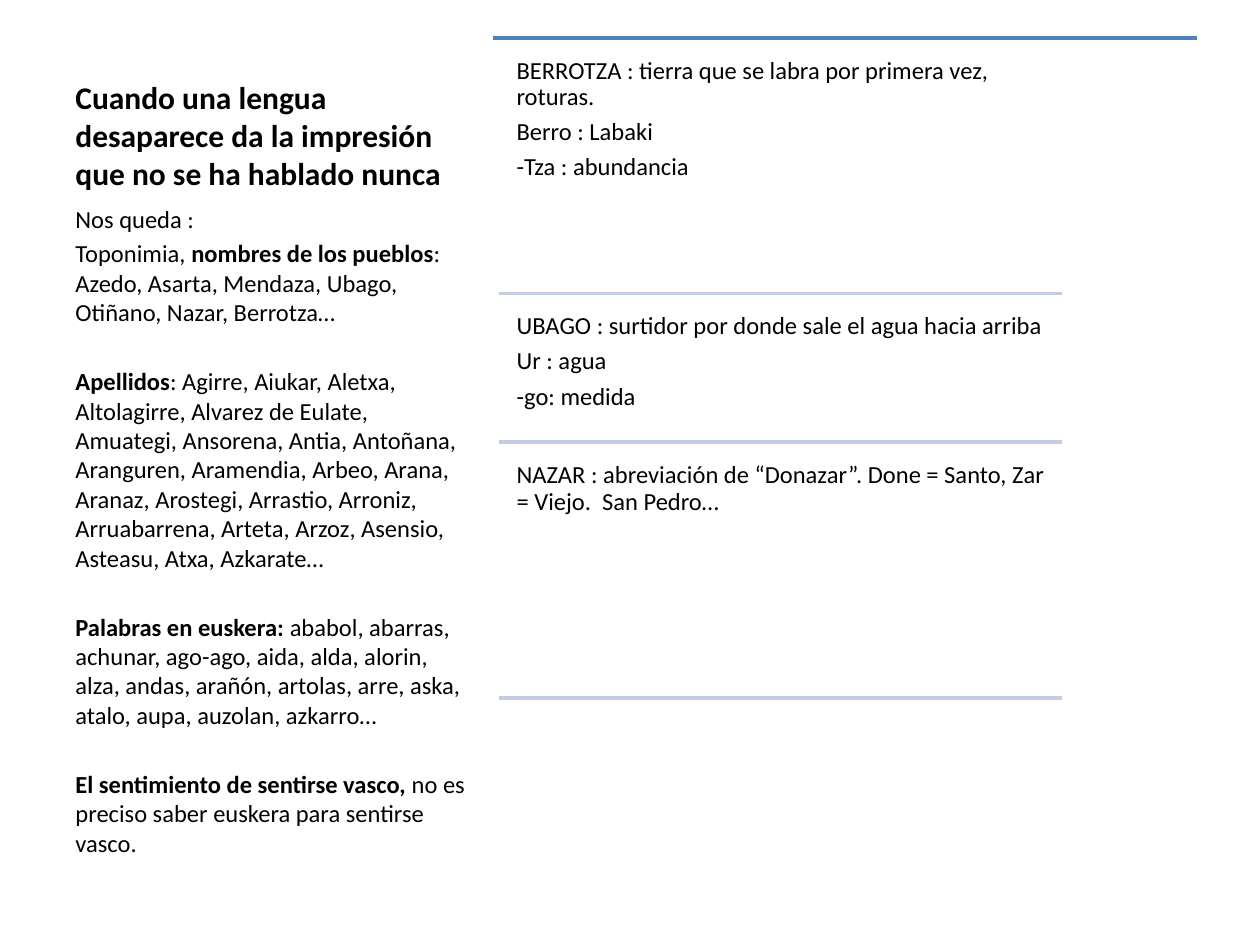
from lxml import etree
from pptx import Presentation
from pptx import util as u
from pptx.dml.color import RGBColor
from pptx.enum import shapes, text
from pptx.oxml.ns import qn

COLORS = {"text": "000000", "top rule": "4F81BD", "rule": "C2CDE1"}
FONT = "Calibri"
BODY_SIZE = 14

presentation = Presentation()
presentation.slide_width = u.Inches(10)
presentation.slide_height = u.Inches(7.5)
slide = presentation.slides.add_slide(presentation.slide_layouts[6])

LEFT, LEFT_WIDTH = 0.5, 3.29
TOP, BODY_TOP, BODY_HEIGHT = 0.3, 1.57, 5.13
ENTRY_LEFT, ENTRY_WIDTH, ENTRY_GAP = 4.04, 4.39, 0.1
RULE_LEFT, RULE_RIGHT = 3.96, 8.43


def add_text(box, paragraphs, size=BODY_SIZE, inset=(0.1, 0.05), anchor=text.MSO_ANCHOR.TOP):
    """Add a text box; each paragraph is a list of (words, bold) runs."""
    frame = slide.shapes.add_textbox(*map(u.Inches, box)).text_frame
    frame.word_wrap = True
    frame.vertical_anchor = anchor
    frame.margin_left = frame.margin_right = u.Inches(inset[0])
    frame.margin_top = frame.margin_bottom = u.Inches(inset[1])
    for index, runs in enumerate(paragraphs):
        paragraph = frame.add_paragraph() if index else frame.paragraphs[0]
        paragraph.font.name = FONT
        paragraph.font.size = u.Pt(size)
        paragraph.font.color.rgb = RGBColor.from_string(COLORS["text"])
        for words, bold in runs:
            run = paragraph.add_run()
            run.text = words
            run.font.bold = bold
    return frame


def add_rule(left, right, y, color):
    rule = slide.shapes.add_connector(
        shapes.MSO_CONNECTOR.STRAIGHT, *map(u.Inches, (left, y, right, y)))
    rule.line.color.rgb = RGBColor.from_string(COLORS[color])
    rule.line.width = u.Pt(2)
    etree.SubElement(rule._element.spPr, qn("a:effectLst"))


# Left column: title and what remains of the language
add_text((LEFT, TOP, LEFT_WIDTH, BODY_TOP - TOP),
         [[("Cuando una lengua desaparece da la impresión que no se ha hablado nunca", True)]],
         size=18, anchor=text.MSO_ANCHOR.BOTTOM)

remains = [
    [("Nos queda :", False)],
    [("Toponimia, ", False), ("nombres de los pueblos", True),
     (": Azedo, Asarta, Mendaza, Ubago, Otiñano, Nazar, Berrotza…", False)],
    [("Apellidos", True),
     (": Agirre, Aiukar, Aletxa, Altolagirre, Alvarez de Eulate, Amuategi, Ansorena, Antia, "
      "Antoñana, Aranguren, Aramendia, Arbeo, Arana, Aranaz, Arostegi, Arrastio, Arroniz, "
      "Arruabarrena, Arteta, Arzoz, Asensio, Asteasu, Atxa, Azkarate…", False)],
    [("Palabras en euskera: ", True),
     ("ababol, abarras, achunar, ago-ago, aida, alda, alorin, alza, andas, arañón, artolas, "
      "arre, aska, atalo, aupa, auzolan, azkarro…", False)],
    [("El sentimiento de sentirse vasco, ", True),
     ("no es preciso saber euskera para sentirse vasco.", False)],
]
body = add_text((LEFT, BODY_TOP, LEFT_WIDTH, BODY_HEIGHT), remains)
for paragraph, gap in zip(body.paragraphs, (0, 2.8, 22.6, 22.6, 22.6)):
    paragraph.space_before = u.Pt(gap)

# Right column: place names, each closed by a rule
add_rule(3.91, 9.5, TOP, "top rule")
place_names = [
    (2.03, ["BERROTZA : tierra que se labra por primera vez, roturas.",
            "Berro : Labaki", "-Tza : abundancia"]),
    (1.18, ["UBAGO : surtidor por donde sale el agua hacia arriba",
            "Ur : agua", "-go: medida"]),
    (2.03, ["NAZAR : abreviación de “Donazar”. Done = Santo, Zar = Viejo.  San Pedro…"]),
]
y = TOP
for height, lines in place_names:
    entry = add_text((ENTRY_LEFT, y + ENTRY_GAP, ENTRY_WIDTH, height - ENTRY_GAP),
                     [[(line, False)] for line in lines], inset=(0.06, 0.06))
    for paragraph in entry.paragraphs:
        paragraph.line_spacing = 0.9
        paragraph.space_after = u.Pt(4.9)
    y += height
    add_rule(RULE_LEFT, RULE_RIGHT, y, "rule")

presentation.save("out.pptx")
